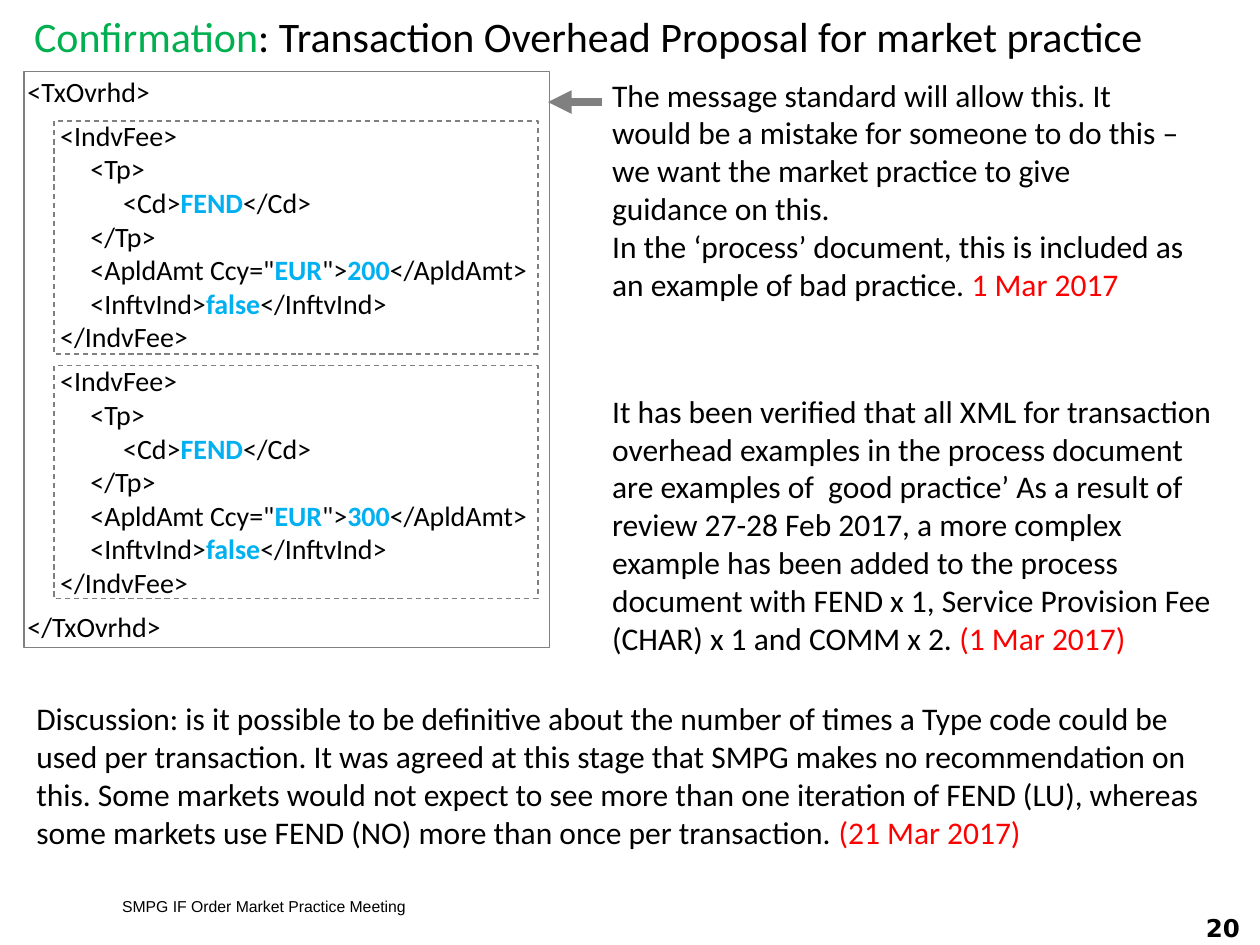
from lxml.etree import SubElement
from pptx import Presentation
from pptx.dml.color import RGBColor
from pptx.enum.dml import MSO_LINE
from pptx.enum.shapes import MSO_CONNECTOR, MSO_SHAPE
from pptx.enum.text import MSO_ANCHOR, MSO_AUTO_SIZE, PP_ALIGN
from pptx.oxml.ns import qn
from pptx.util import Inches, Pt

BLACK, WHITE, GRAY = "000000", "FFFFFF", "808080"
GREEN, BLUE, RED = "00B050", "00B0F0", "FF0000"
CODE_TABS = (0.26, 0.5, 0.76, 1, 1.26)


def rgb(color):
    return RGBColor.from_string(color)


def inches(*lengths):
    return [Inches(length) for length in lengths]


def write(para, text, size=18, font="Calibri", color=BLACK, bold=False):
    span = para.add_run()
    span.text = text
    span.font.size = Pt(size)
    span.font.name = font
    span.font.bold = bold
    span.font.color.rgb = rgb(color)


def add_text_box(slide, left, top, width, height, anchor=MSO_ANCHOR.TOP, grow=True):
    """Add an empty wrapping text box and return its text frame."""
    frame = slide.shapes.add_textbox(*inches(left, top, width, height)).text_frame
    frame.word_wrap = True
    frame.vertical_anchor = anchor
    frame.auto_size = MSO_AUTO_SIZE.SHAPE_TO_FIT_TEXT if grow else MSO_AUTO_SIZE.NONE
    return frame


def add_frame(slide, left, top, width, height, fill=None, line=GRAY, dash=None):
    """Add a rectangle with an optional fill, outline and dash."""
    frame = slide.shapes.add_shape(MSO_SHAPE.RECTANGLE, *inches(left, top, width, height))
    frame.shadow.inherit = False
    if fill:
        frame.fill.solid()
        frame.fill.fore_color.rgb = rgb(fill)
    else:
        frame.fill.background()
    if line:
        frame.line.color.rgb = rgb(line)
        frame.line.width = Pt(0.75)
        if dash:
            frame.line.dash_style = dash
    else:
        frame.line.fill.background()
    return frame


def add_arrow(slide, start_x, end_x, y):
    arrow = slide.shapes.add_connector(MSO_CONNECTOR.STRAIGHT, *inches(start_x, y, end_x, y))
    arrow.line.color.rgb = rgb(GRAY)
    arrow.line.width = Pt(4.5)
    SubElement(arrow.line._get_or_add_ln(), qn("a:tailEnd"), type="triangle")
    SubElement(arrow._element.spPr, qn("a:effectLst"))


def set_tabs(para, positions):
    tab_list = SubElement(para._p.get_or_add_pPr(), qn("a:tabLst"))
    for position in positions:
        SubElement(tab_list, qn("a:tab"), pos=str(Inches(position)), algn="l")


def fee_lines(amount):
    """Return one fee block; values between bars are highlighted."""
    return [
        "\t<IndvFee>",
        "\t\t<Tp>",
        "\t\t\t<Cd>|FEND|</Cd>",
        "\t\t</Tp>",
        f'\t\t<ApldAmt Ccy="|EUR|">|{amount}|</ApldAmt>',
        "\t\t<InftvInd>|false|</InftvInd>",
        "\t</IndvFee>",
    ]


def add_title(slide, left, top, width, height):
    title = slide.shapes.title
    title.left, title.top, title.width, title.height = inches(left, top, width, height)
    title.text_frame.vertical_anchor = MSO_ANCHOR.MIDDLE
    para = title.text_frame.paragraphs[0]
    para.alignment = PP_ALIGN.LEFT
    write(para, "Confirmation", size=24, color=GREEN)
    write(para, ": Transaction Overhead Proposal for market practice", size=24)


def add_code_panel(slide, left, top, width, height):
    """Add the framed message with a dashed outline round each fee."""
    add_frame(slide, left, top, width, height, fill=WHITE)
    code = add_text_box(slide, left - 0.07, top - 0.03, width + 0.27, height + 0.09)
    lines = ["<TxOvrhd>", *fee_lines(200), *fee_lines(300), "</TxOvrhd>"]
    for index, line in enumerate(lines):
        para = code.add_paragraph() if index else code.paragraphs[0]
        set_tabs(para, CODE_TABS)
        if line.strip() in ("<TxOvrhd>", "</IndvFee>"):
            para.space_after = Pt(6)
        for part, text in enumerate(line.split("|")):
            highlighted = part % 2 == 1
            write(para, text, size=16, color=BLUE if highlighted else BLACK, bold=highlighted)
    for fee in range(2):
        add_frame(slide, left + 0.24, top + 0.39 + fee * 1.94, width - 0.33, 1.85,
                  dash=MSO_LINE.DASH)


def add_comment(frame, paragraphs, date):
    """Fill a text frame with paragraphs, the last one ending in a red date."""
    for index, text in enumerate(paragraphs):
        para = frame.add_paragraph() if index else frame.paragraphs[0]
        para.alignment = PP_ALIGN.LEFT
        write(para, text)
    write(para, date, color=RED)


def add_discussion(slide, left, top, width, height):
    frame = add_frame(slide, left, top, width, height, fill=WHITE, line=None).text_frame
    frame.word_wrap = True
    frame.vertical_anchor = MSO_ANCHOR.TOP
    frame.auto_size = MSO_AUTO_SIZE.SHAPE_TO_FIT_TEXT
    add_comment(frame, [
        "Discussion: is it possible to be definitive about the number of times a Type code "
        "could be used per transaction. It was agreed at this stage that SMPG makes no "
        "recommendation on this. Some markets would not expect to see more than one iteration "
        "of FEND (LU), whereas some markets use FEND (NO) more than once per transaction. ",
    ], "(21 Mar 2017)")


def add_footer(slide, left, top, width, height):
    meeting = add_text_box(slide, left, top, width - 2.86, height, MSO_ANCHOR.MIDDLE, grow=False)
    write(meeting.paragraphs[0], "SMPG IF Order Market Practice Meeting", size=9, font="Arial")
    number = add_text_box(slide, left + width - 0.83, top + 0.17, 0.83, height,
                          MSO_ANCHOR.MIDDLE, grow=False)
    number.paragraphs[0].alignment = PP_ALIGN.RIGHT
    write(number.paragraphs[0], "20", size=14, font="DejaVu Sans", bold=True)


def main():
    deck = Presentation()
    deck.slide_width, deck.slide_height = inches(10, 7.5)
    slide = deck.slides.add_slide(deck.slide_layouts[5])
    add_title(slide, 0.17, 0, 10.06, 0.56)
    add_code_panel(slide, 0.19, 0.57, 4.17, 4.57)
    add_arrow(slide, 4.78, 4.35, 0.81)
    add_comment(add_text_box(slide, 4.76, 0.55, 4.78, 1.92), [
        "The message standard will allow this. It would be a mistake for someone to do this – "
        "we want the market practice to give guidance on this.",
        "In the ‘process’ document, this is included as an example of bad practice. ",
    ], "1 Mar 2017")
    add_comment(add_text_box(slide, 4.76, 3.06, 4.99, 2.22), [
        "It has been verified that all XML for transaction overhead examples in the process "
        "document are examples of  good practice’ As a result of review 27-28 Feb 2017, a more "
        "complex example has been added to the process document with FEND x 1, Service "
        "Provision Fee (CHAR) x 1 and COMM x 2. ",
    ], "(1 Mar 2017)")
    add_discussion(slide, 0.19, 5.5, 9.56, 1.31)
    add_footer(slide, 0.87, 7.07, 9.07, 0.25)
    deck.save("out.pptx")


if __name__ == "__main__":
    main()
